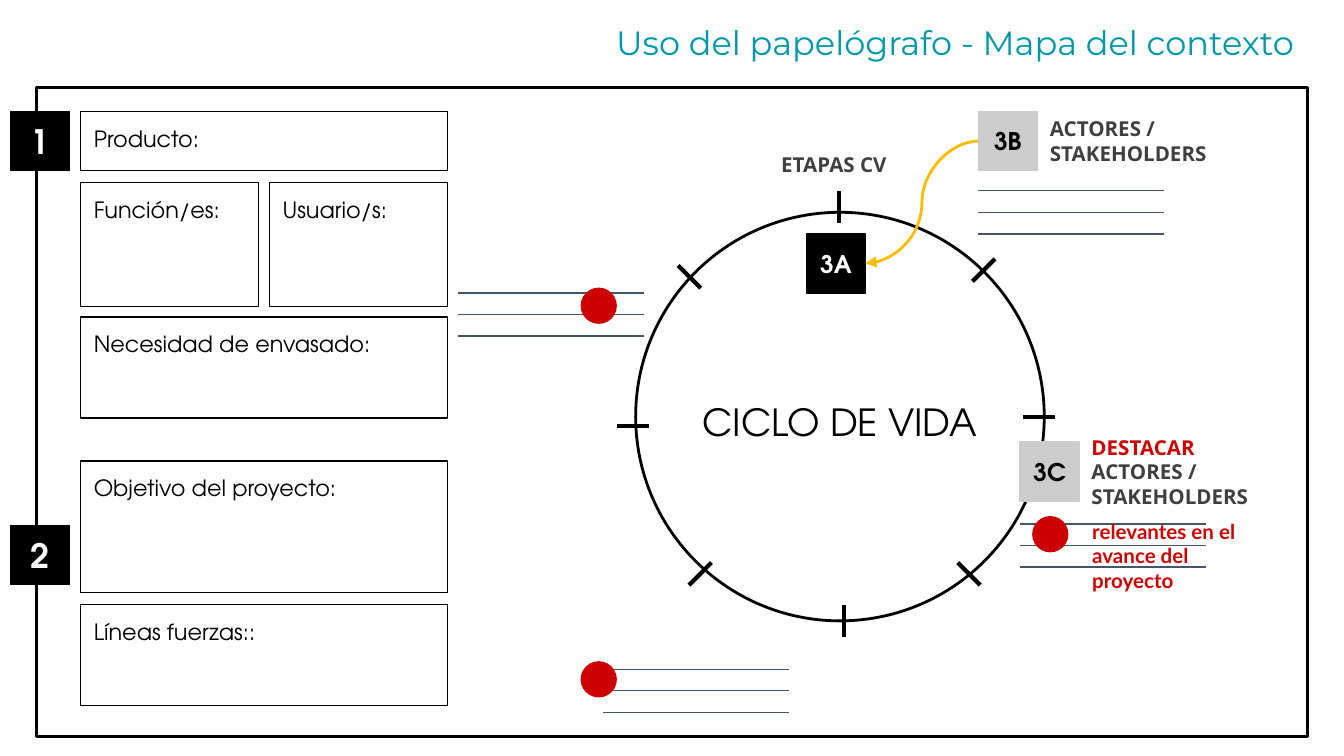
from dataclasses import dataclass

from lxml.etree import SubElement
from pptx import Presentation
from pptx.dml.color import RGBColor
from pptx.enum.shapes import MSO_CONNECTOR, MSO_SHAPE
from pptx.enum.text import MSO_ANCHOR, MSO_AUTO_SIZE, PP_ALIGN
from pptx.oxml.ns import qn
from pptx.util import Inches, Pt


@dataclass(frozen=True)
class Theme:
    ink: str = "000000"
    paper: str = "FFFFFF"
    teal: str = "0097A7"
    grey: str = "CCCCCC"
    slate: str = "44546A"
    label: str = "3F3F3F"
    red: str = "CC0000"
    amber: str = "FABB00"
    geometric: str = "TeX Gyre Adventor"
    heading: str = "Montserrat"
    caption: str = "Open Sans"
    remark: str = "Lato"
    title_size: int = 18
    cycle_size: int = 20
    code_size: int = 13
    field_size: int = 12
    label_size: int = 11


THEME = Theme()
WIDTH = 10
HEIGHT = WIDTH * 9 / 16
LEFT, COLUMN, GUTTER = 0.6, 2.73, 0.08
HALF = (COLUMN - GUTTER) / 2
BADGE, DOT, TICK = 0.44, 0.27, 0.24
RULE_WIDTH, RULE_GAP = 1.38, 0.16
RING_LEFT, RING_TOP, RING = 4.73, 1.58, 3.04

TITLE = "Uso del papelógrafo - Mapa del contexto"
CYCLE = "CICLO DE VIDA"
FIELDS = [
    (0.83, 0.44, ["Producto:"]),
    (1.36, 0.92, ["Función/es:", "Usuario/s:"]),
    (2.36, 0.75, ["Necesidad de envasado:"]),
    (3.43, 0.98, ["Objetivo del proyecto:"]),
    (4.5, 0.75, ["Líneas fuerzas::"]),
]
BADGES = [
    ("1", 0.08, 0.83, THEME.ink, THEME.paper, THEME.title_size),
    ("2", 0.08, 3.91, THEME.ink, THEME.paper, THEME.title_size),
    ("3A", 6, 1.74, THEME.ink, THEME.paper, THEME.code_size),
    ("3B", 7.28, 0.83, THEME.grey, THEME.ink, THEME.code_size),
    ("3C", 7.59, 3.29, THEME.grey, THEME.ink, THEME.code_size),
]
TICKS = [
    (6.24, 1.54, 0, 1), (6.28, 4.62, 0, 1), (4.71, 3.17, 1, 0), (7.73, 3.1, 1, 0),
    (7.32, 2.01, 0.7, -0.7), (5.21, 4.27, 0.7, -0.7),
    (7.21, 4.27, 0.7, 0.7), (5.13, 2.06, 0.7, 0.7),
]
RULE_GROUPS = [(7.28, 1.42), (7.59, 3.9), (4.49, 4.98), (3.41, 2.18)]
DOTS = [(7.68, 3.84), (4.32, 2.14), (4.32, 4.92)]
LABELS = [
    (5.5, 1, 1.45, 0.44, PP_ALIGN.CENTER, THEME.caption, [("ETAPAS CV ", THEME.label)]),
    (7.72, 0.83, 1.45, 0.44, PP_ALIGN.LEFT, THEME.caption,
     [("ACTORES / STAKEHOLDERS", THEME.label)]),
    (8.03, 3.29, 1.45, 0.44, PP_ALIGN.LEFT, THEME.caption,
     [("DESTACAR", THEME.red), (" ACTORES / STAKEHOLDERS", THEME.label)]),
    (8.03, 3.86, 1.53, 0.55, PP_ALIGN.LEFT, THEME.remark,
     [("relevantes en el avance del proyecto", THEME.red)]),
]


def write(shape, spans, size, font, align=PP_ALIGN.LEFT, anchor=MSO_ANCHOR.TOP,
          bold=False, insets=(0.1, 0.1)):
    """Fill a shape with one paragraph made of (text, colour) spans."""
    frame = shape.text_frame
    frame.word_wrap = True
    frame.auto_size = MSO_AUTO_SIZE.NONE
    frame.vertical_anchor = anchor
    frame.margin_left = frame.margin_right = Inches(insets[0])
    frame.margin_top = frame.margin_bottom = Inches(insets[1])
    para = frame.paragraphs[0]
    para.alignment = align
    para.font.size, para.font.name, para.font.bold = Pt(size), font, bold
    for text, colour in spans:
        span = para.add_run()
        span.text = text
        span.font.color.rgb = RGBColor.from_string(colour)


def add_box(page, kind, left, top, width, height, fill=None, line=None, weight=0.75):
    """Add a flat preset shape with an optional fill and outline."""
    box = page.shapes.add_shape(kind, *map(Inches, (left, top, width, height)))
    box.shadow.inherit = False
    if fill:
        box.fill.solid()
        box.fill.fore_color.rgb = RGBColor.from_string(fill)
    else:
        box.fill.background()
    if line:
        box.line.color.rgb = RGBColor.from_string(line)
        box.line.width = Pt(weight)
    else:
        box.line.fill.background()
    return box


def add_line(page, start, end, colour, weight, kind=MSO_CONNECTOR.STRAIGHT):
    """Add a connector without shadow between two points."""
    line = page.shapes.add_connector(kind, *map(Inches, (*start, *end)))
    line.line.color.rgb = RGBColor.from_string(colour)
    line.line.width = Pt(weight)
    SubElement(line._element.spPr, qn("a:effectLst"))
    return line


def add_title(page):
    """Place and format the title placeholder."""
    title = page.shapes.title
    title.left, title.top, title.width, title.height = map(Inches, (4.41, 0.11, 5.32, 0.4))
    write(title, [(TITLE, THEME.teal)], THEME.title_size, THEME.heading,
          PP_ALIGN.RIGHT, insets=(0.1, 0.05))


def add_fields(page):
    """Draw the form fields, splitting each row evenly."""
    for top, height, names in FIELDS:
        width = COLUMN if len(names) == 1 else HALF
        for index, name in enumerate(names):
            box = add_box(page, MSO_SHAPE.RECTANGLE, LEFT + index * (width + GUTTER),
                          top, width, height, line=THEME.ink)
            write(box, [(name, THEME.ink)], THEME.field_size, THEME.geometric)


def add_cycle(page):
    """Draw the life-cycle ring with its ticks and name."""
    add_box(page, MSO_SHAPE.OVAL, RING_LEFT, RING_TOP, RING, RING, line=THEME.ink, weight=1.5)
    for x, y, across, down in TICKS:
        dx, dy = across * TICK / 2, down * TICK / 2
        add_line(page, (x - dx, y - dy), (x + dx, y + dy), THEME.ink, 2.25)
    box = page.shapes.add_textbox(*map(Inches, (RING_LEFT, 2.87, RING, 0.54)))
    write(box, [(CYCLE, THEME.ink)], THEME.cycle_size, THEME.geometric, PP_ALIGN.CENTER)


def add_stakeholders(page):
    """Draw writing rules, badges, labels, dots and the curved arrow."""
    for left, top in RULE_GROUPS:
        for row in range(3):
            y = top + row * RULE_GAP
            add_line(page, (left, y), (left + RULE_WIDTH, y), THEME.slate, 0.75)
    for text, left, top, fill, colour, size in BADGES:
        box = add_box(page, MSO_SHAPE.RECTANGLE, left, top, BADGE, BADGE, fill, fill)
        write(box, [(text, colour)], size, THEME.geometric, PP_ALIGN.CENTER,
              MSO_ANCHOR.MIDDLE, bold=True)
    for left, top, width, height, align, font, spans in LABELS:
        box = add_box(page, MSO_SHAPE.ROUNDED_RECTANGLE, left, top, width, height)
        write(box, spans, THEME.label_size, font, align, MSO_ANCHOR.MIDDLE,
              bold=True, insets=(0.07, 0.04))
    for left, top in DOTS:
        add_box(page, MSO_SHAPE.OVAL, left, top, DOT, DOT, fill=THEME.red)
    arrow = add_line(page, (7.28, 1.05), (6.44, 1.96), THEME.amber, 1.5, MSO_CONNECTOR.CURVE)
    SubElement(arrow.line._get_or_add_ln(), qn("a:tailEnd"), type="triangle")


def main():
    """Build the context-map slide."""
    deck = Presentation()
    deck.slide_width, deck.slide_height = Inches(WIDTH), Inches(HEIGHT)
    page = deck.slides.add_slide(deck.slide_layouts[5])
    add_title(page)
    add_box(page, MSO_SHAPE.RECTANGLE, 0.27, 0.65, 9.46, 4.83, line=THEME.ink, weight=1.5)
    add_fields(page)
    add_cycle(page)
    add_stakeholders(page)
    deck.save("out.pptx")


if __name__ == "__main__":
    main()
